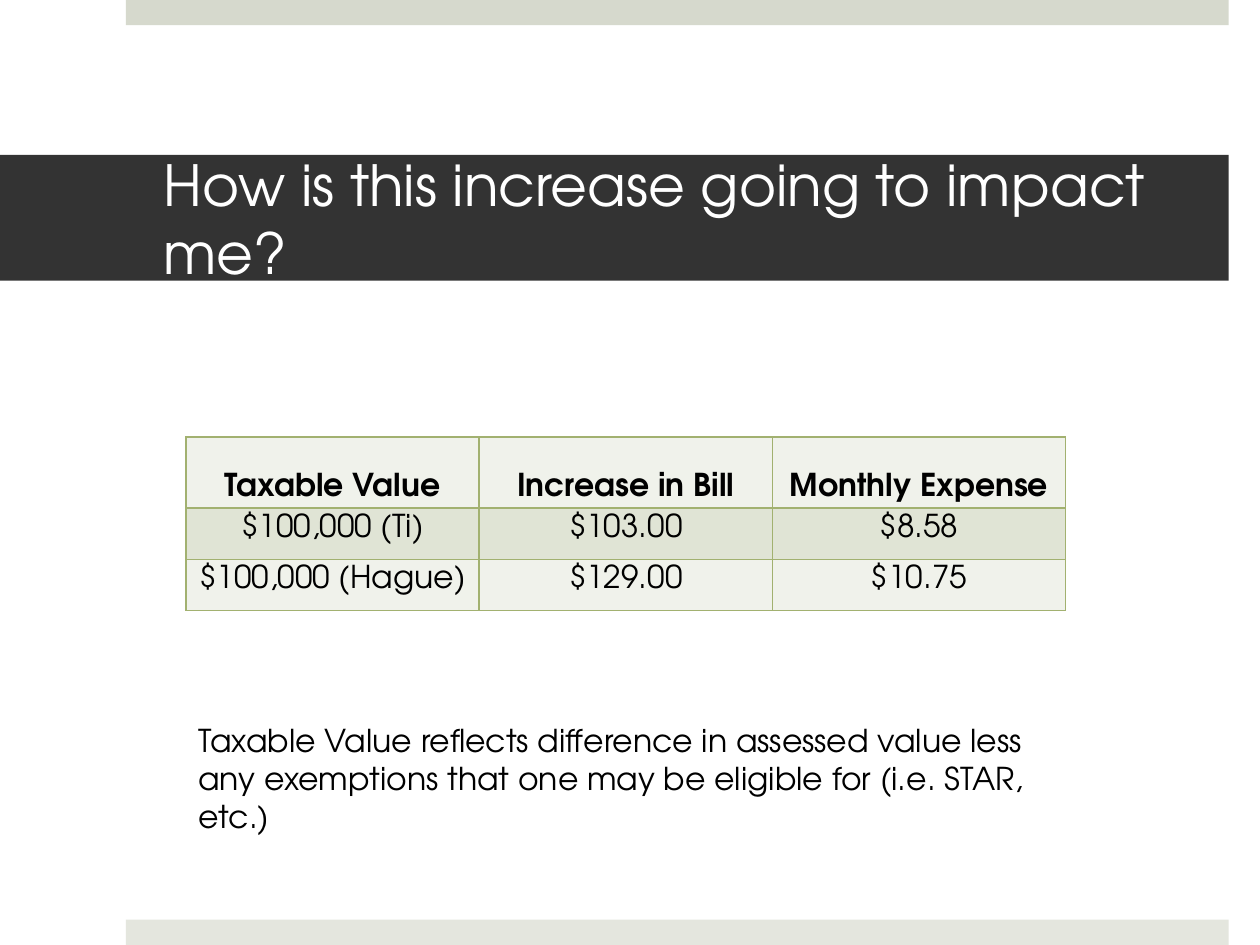
import collections

import lxml.etree
import pptx
import pptx.dml.color
import pptx.enum.shapes
import pptx.enum.text
import pptx.oxml.ns
import pptx.util

Cm = pptx.util.Cm
Pt = pptx.util.Pt
ANCHOR = pptx.enum.text.MSO_ANCHOR
ALIGN = pptx.enum.text.PP_ALIGN
Box = collections.namedtuple("Box", "left top width height")

FONT = "TeX Gyre Adventor"
COLORS = {
    "top_bar": "D6D9CD",
    "bottom_bar": "E4E6DE",
    "banner": "333333",
    "banner_text": "FFFFFF",
    "text": "000000",
    "light_row": "F0F2EB",
    "dark_row": "E0E4D5",
    "border": "A2B170",
}
IMPACT = [
    ["Taxable Value", "Increase in Bill", "Monthly Expense"],
    ["$100,000 (Ti)", "$103.00", "$8.58"],
    ["$100,000 (Hague)", "$129.00", "$10.75"],
]


def color(key):
    return pptx.dml.color.RGBColor.from_string(COLORS[key])


def fill_with(target, key):
    target.fill.solid()
    target.fill.fore_color.rgb = color(key)


def write(frame, words, size=18, key="text", bold=False, align=ALIGN.LEFT):
    paragraph = frame.paragraphs[0]
    paragraph.alignment = align
    run = paragraph.add_run()
    run.text = words
    run.font.name = FONT
    run.font.size = Pt(size)
    run.font.bold = bold
    run.font.color.rgb = color(key)


def outline_cell(cell):
    properties = cell._tc.get_or_add_tcPr()
    for position, side in enumerate(("lnL", "lnR", "lnT", "lnB")):
        edge = lxml.etree.Element(pptx.oxml.ns.qn(f"a:{side}"), w=str(Pt(1)))
        paint = lxml.etree.SubElement(edge, pptx.oxml.ns.qn("a:solidFill"))
        lxml.etree.SubElement(paint, pptx.oxml.ns.qn("a:srgbClr"), val=COLORS["border"])
        properties.insert(position, edge)


def add_edge_bars(slide, box, thickness):
    bottom = box.top + box.height - thickness
    for top, key in ((box.top, "top_bar"), (bottom, "bottom_bar")):
        bar = slide.shapes.add_shape(
            pptx.enum.shapes.MSO_SHAPE.RECTANGLE,
            Cm(box.left), Cm(top), Cm(box.width), Cm(thickness))
        bar.shadow.inherit = False
        bar.line.fill.background()
        fill_with(bar, key)


def add_banner(slide, box):
    banner = slide.shapes.title
    banner.left, banner.top, banner.width, banner.height = map(Cm, box)
    fill_with(banner, "banner")
    frame = banner.text_frame
    frame.word_wrap = True
    frame.auto_size = pptx.enum.text.MSO_AUTO_SIZE.NONE
    frame.vertical_anchor = ANCHOR.MIDDLE
    frame.margin_left, frame.margin_right = Cm(3.3), Cm(0.76)
    frame.margin_top = frame.margin_bottom = Cm(0.13)
    write(frame, "How is this increase going to impact me?", 32.4, "banner_text")


def add_impact_table(slide, box):
    header_height = 1.43
    row_height = (box.height - header_height) / (len(IMPACT) - 1)
    table = slide.shapes.add_table(len(IMPACT), len(IMPACT[0]), *map(Cm, box)).table
    table.first_row = table.horz_banding = False
    for column in table.columns:
        column.width = Cm(box.width / len(IMPACT[0]))
    for r, values in enumerate(IMPACT):
        header = r == 0
        table.rows[r].height = Cm(header_height if header else row_height)
        for c, value in enumerate(values):
            cell = table.cell(r, c)
            cell.margin_left = cell.margin_right = Cm(0.15)
            cell.margin_top = cell.margin_bottom = Cm(0.12)
            cell.vertical_anchor = ANCHOR.BOTTOM if header else ANCHOR.TOP
            fill_with(cell, "dark_row" if r % 2 else "light_row")
            outline_cell(cell)
            write(cell.text_frame, value, bold=header, align=ALIGN.CENTER)


def add_note(slide, box):
    frame = slide.shapes.add_textbox(*map(Cm, box)).text_frame
    frame.word_wrap = True
    write(frame, "Taxable Value reflects difference in assessed value less any "
                 "exemptions that one may be eligible for (i.e. STAR, etc.)")


def main():
    deck = pptx.Presentation()
    deck.slide_width, deck.slide_height = Cm(25.4), Cm(19.05)
    slide = deck.slides.add_slide(deck.slide_layouts[5])
    add_edge_bars(slide, Box(2.54, 0, 22.23, 19.05), 0.51)
    add_banner(slide, Box(0, 3.12, 24.77, 2.54))
    add_impact_table(slide, Box(3.75, 8.81, 17.73, 3.5))
    add_note(slide, Box(3.75, 14.41, 17.73, 2.57))
    deck.save("out.pptx")


if __name__ == "__main__":
    main()
